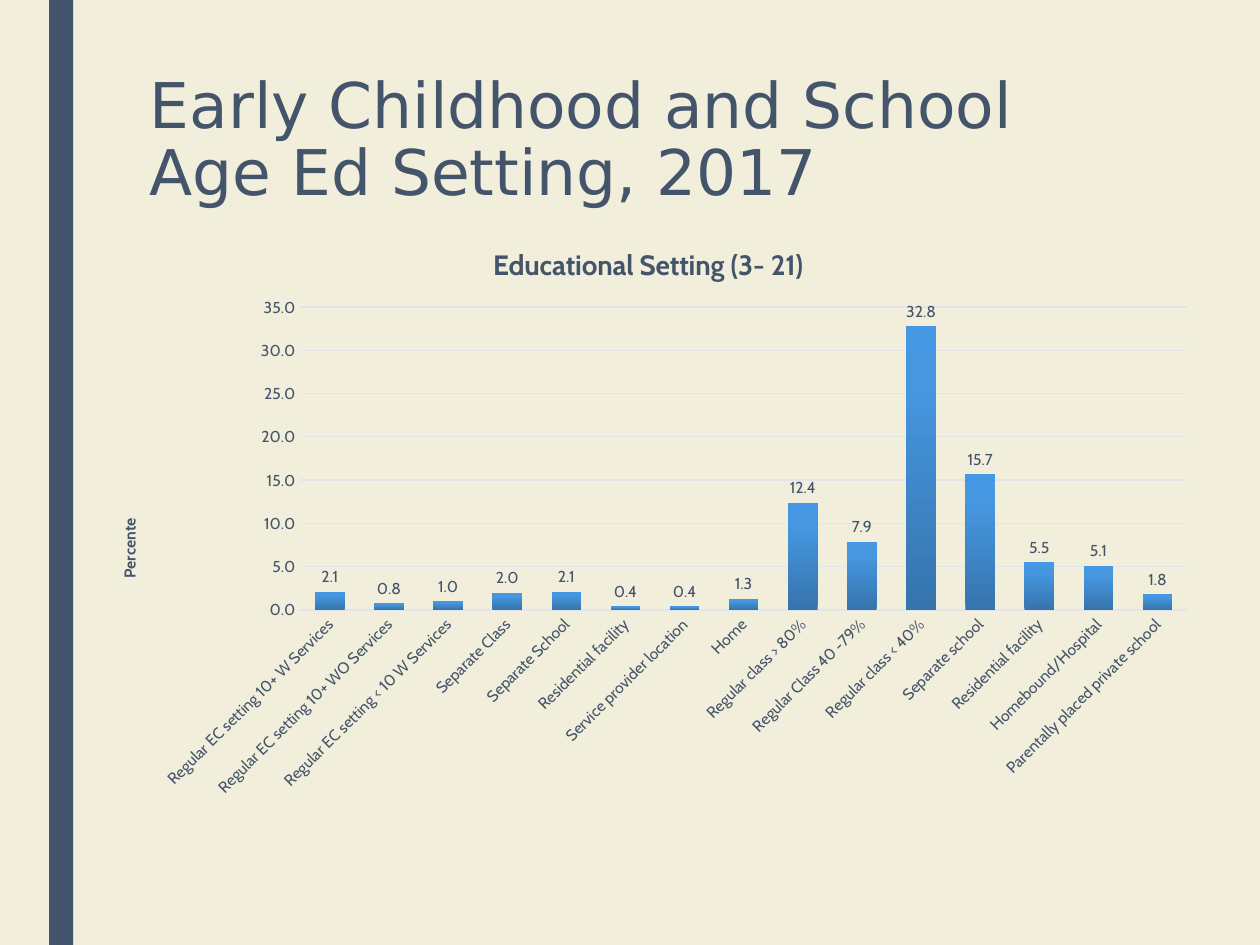
from typing import NamedTuple

from lxml.etree import SubElement
from pptx import Presentation
from pptx.chart.data import CategoryChartData
from pptx.dml.color import RGBColor
from pptx.enum.chart import XL_CHART_TYPE, XL_LABEL_POSITION, XL_TICK_MARK
from pptx.enum.shapes import MSO_SHAPE
from pptx.enum.text import MSO_ANCHOR, MSO_AUTO_SIZE, PP_ALIGN
from pptx.oxml import parse_xml
from pptx.oxml.ns import nsdecls, qn
from pptx.util import Inches, Pt

WIDTH, HEIGHT = 10, 7.5
SLATE, CREAM, GRID = "44546A", "F1EEDB", "E0E5EB"
BAR_STOPS = ((0, "3674AD"), (80, "4697E0"), (100, "4498E4"))
NUMBER_FORMAT = "###0.0"


class Setting(NamedTuple):
    name: str
    percent: float


SETTINGS = (
    Setting("Regular EC setting 10+ W Services", 2.1),
    Setting("Regular EC setting 10+ WO Services", 0.8),
    Setting("Regular EC setting < 10 W Services", 1.0),
    Setting("Separate Class", 2.0),
    Setting("Separate School", 2.1),
    Setting("Residential facility", 0.4),
    Setting("Service provider location", 0.4),
    Setting("Home", 1.3),
    Setting("Regular class > 80%", 12.4),
    Setting("Regular Class 40 -79%", 7.9),
    Setting("Regular class < 40%", 32.8),
    Setting("Separate school", 15.7),
    Setting("Residential facility", 5.5),
    Setting("Homebound/Hospital", 5.1),
    Setting("Parentally placed private school", 1.8),
)


class Box(NamedTuple):
    left: float
    top: float
    width: float
    height: float

    def lengths(self) -> tuple:
        return tuple(
            Inches(share * side)
            for share, side in zip(self, (WIDTH, HEIGHT, WIDTH, HEIGHT))
        )


BAND = Box(0.039, 0, 0.019, 1)
TITLE = Box(0.112, 0.065, 0.788, 0.17)
CHART = Box(0.069, 0.235, 0.891, 0.621)


def color(value: str) -> RGBColor:
    return RGBColor.from_string(value)


def style_font(font, size: float, name: str = "Cabin", bold: bool = False) -> None:
    font.size, font.name, font.bold = Pt(size), name, bold
    font.color.rgb = color(SLATE)


def style_line(line, value: str) -> None:
    line.color.rgb = color(value)
    line.width = Pt(0.75)


def place(element, **shares: float) -> None:
    for old in element.findall(qn("c:layout")):
        element.remove(old)
    layout = parse_xml(f"<c:layout {nsdecls('c')}/>")
    manual = SubElement(layout, qn("c:manualLayout"))
    if "w" in shares:
        SubElement(manual, qn("c:layoutTarget")).set("val", "inner")
    for axis in "xy":
        SubElement(manual, qn(f"c:{axis}Mode")).set("val", "edge")
    for key, share in shares.items():
        SubElement(manual, qn(f"c:{key}")).set("val", str(share))
    text = element.find(qn("c:tx"))
    element.insert(0 if text is None else 1, layout)


def fill_bars(series) -> None:
    stops = "".join(
        f'<a:gs pos="{position * 1000}"><a:srgbClr val="{value}"/></a:gs>'
        for position, value in BAR_STOPS
    )
    properties = series.format.fill
    properties.background()
    shape_properties = series._element.find(qn("c:spPr"))
    shape_properties.replace(
        shape_properties.find(qn("a:noFill")),
        parse_xml(
            f"<a:gradFill {nsdecls('a')}><a:gsLst>{stops}</a:gsLst>"
            '<a:lin ang="16200000" scaled="0"/></a:gradFill>'
        ),
    )


def add_band(slide) -> None:
    band = slide.shapes.add_shape(MSO_SHAPE.RECTANGLE, *BAND.lengths())
    band.shadow.inherit = False
    band.fill.solid()
    band.fill.fore_color.rgb = color(SLATE)
    band.line.fill.background()


def add_title(slide, text: str) -> None:
    title = slide.shapes.title
    title.left, title.top, title.width, title.height = TITLE.lengths()
    frame = title.text_frame
    frame.text = text
    frame.word_wrap, frame.auto_size = True, MSO_AUTO_SIZE.NONE
    frame.vertical_anchor = MSO_ANCHOR.MIDDLE
    frame.margin_left = frame.margin_right = Inches(0.07)
    paragraph = frame.paragraphs[0]
    paragraph.alignment = PP_ALIGN.LEFT
    paragraph.line_spacing = 0.89
    style_font(paragraph.font, 36, "DejaVu Sans")


def add_title_text(title, text: str, size: float) -> None:
    title.text_frame.text = text
    style_font(title.text_frame.paragraphs[0].font, size, bold=True)


def add_settings_chart(slide) -> None:
    data = CategoryChartData(number_format=NUMBER_FORMAT)
    data.categories = [setting.name for setting in SETTINGS]
    data.add_series("Series 1", [setting.percent for setting in SETTINGS])
    chart = slide.shapes.add_chart(
        XL_CHART_TYPE.COLUMN_CLUSTERED, *CHART.lengths(), data
    ).chart
    style_font(chart.font, 9)
    chart.has_legend = False
    add_title_text(chart.chart_title, "Educational Setting (3- 21)", 16)
    place(chart._chartSpace.chart.plotArea, x=0.19, y=0.145, w=0.79, h=0.516)

    for axis in (chart.category_axis, chart.value_axis):
        axis.major_tick_mark = axis.minor_tick_mark = XL_TICK_MARK.NONE
        style_font(axis.tick_labels.font, 9)
    style_line(chart.category_axis.format.line, GRID)
    names = chart.category_axis._element.find(qn("c:txPr"))
    names.find(qn("a:bodyPr")).set("rot", "-2700000")

    values = chart.value_axis
    values.minimum_scale, values.maximum_scale, values.major_unit = 0, 35, 5
    values.tick_labels.number_format = NUMBER_FORMAT
    values.tick_labels.number_format_is_linked = False
    values.format.line.fill.background()
    style_line(values.major_gridlines.format.line, GRID)
    add_title_text(values.axis_title, "Percente", 9)
    body = values.axis_title.text_frame._txBody.find(qn("a:bodyPr"))
    body.set("rot", "-5400000")
    place(values.axis_title._element, x=0.025, y=0.5)

    plot = chart.plots[0]
    plot.gap_width, plot.overlap, plot.vary_by_categories = 100, -24, False
    fill_bars(plot.series[0])
    plot.has_data_labels = True
    labels = plot.data_labels
    labels.show_value, labels.position = True, XL_LABEL_POSITION.OUTSIDE_END
    labels.number_format, labels.number_format_is_linked = NUMBER_FORMAT, False
    style_font(labels.font, 9)


def main() -> None:
    """Build the educational setting slide."""
    presentation = Presentation()
    presentation.slide_width, presentation.slide_height = Inches(WIDTH), Inches(HEIGHT)
    slide = presentation.slides.add_slide(presentation.slide_layouts[5])
    slide.background.fill.solid()
    slide.background.fill.fore_color.rgb = color(CREAM)
    add_band(slide)
    add_title(slide, "Early Childhood and School Age Ed Setting, 2017")
    add_settings_chart(slide)
    presentation.save("out.pptx")


if __name__ == "__main__":
    main()
